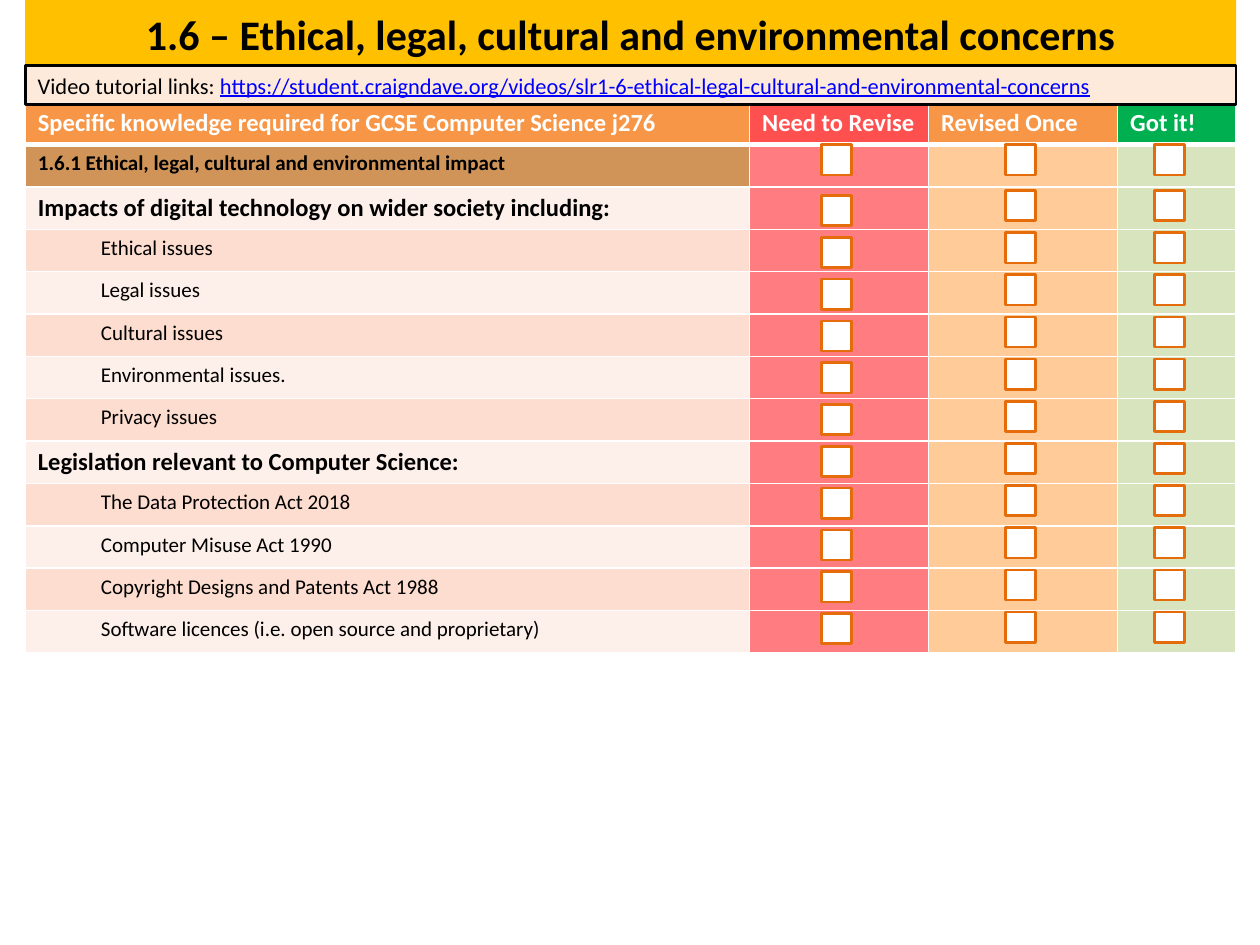
from dataclasses import dataclass

from lxml import etree
from pptx import Presentation
from pptx import util as u
from pptx.dml.color import RGBColor
from pptx.enum import shapes, text
from pptx.oxml import ns

FONT = "Calibri"
BLACK, WHITE = "000000", "FFFFFF"
LEFT, WIDTH = 0.51, 24.41
TABLE_TOP, TABLE_HEIGHT = 2.06, 11.1
BOX_SIZE, FIRST_BOX_TOP = 0.61, 2.92


@dataclass
class Wording:
    content: str
    size: float
    bold: bool = False
    colour: str = BLACK
    underline: bool = False


@dataclass
class Topic:
    wording: Wording
    fill: str
    indented: bool = False


@dataclass
class Status:
    label: str
    header_fill: str
    fill: str
    width: float
    box_left: float
    second_top: float
    last_top: float


def heading(content: str) -> Topic:
    return Topic(Wording(content, 14, True), "FDEFE9")


def issues(*names: str) -> list[Topic]:
    return [Topic(Wording(name, 12), ("FCDDCF", "FDEFE9")[i % 2], True)
            for i, name in enumerate(names)]


TOPICS = [
    Topic(Wording("1.6.1 Ethical, legal, cultural and environmental impact", 12, True), "D09458"),
    heading("Impacts of digital technology on wider society including:"),
    *issues("Ethical issues", "Legal issues", "Cultural issues",
            "Environmental issues.", "Privacy issues"),
    heading("Legislation relevant to Computer Science:"),
    *issues("The Data Protection Act 2018", "Computer Misuse Act 1990",
            "Copyright Designs and Patents Act 1988",
            "Software licences (i.e. open source and proprietary)"),
]
STATUSES = [
    Status("Need to Revise", "FF5050", "FF7C80", 3.61, 16.56, 3.94, 12.37),
    Status("Revised Once", "F79646", "FFCC99", 3.81, 20.27, 3.84, 12.34),
    Status("Got it!", "00B050", "D7E4BD", 2.39, 23.27, 3.84, 12.34),
]


def paint(target, colour: str) -> None:
    target.solid()
    target.fore_color.rgb = RGBColor.from_string(colour)


def write(paragraph, wording: Wording) -> None:
    run = paragraph.add_run()
    run.text = wording.content
    run.font.name = FONT
    run.font.size = u.Pt(wording.size)
    run.font.bold = wording.bold
    run.font.underline = wording.underline
    paint(run.font.fill, wording.colour)


def add_box(slide, left: float, top: float, width: float, height: float,
            fill: str, line: str | None = None):
    box = slide.shapes.add_shape(shapes.MSO_SHAPE.RECTANGLE,
                                 u.Cm(left), u.Cm(top), u.Cm(width), u.Cm(height))
    box.shadow.inherit = False
    paint(box.fill, fill)
    if line:
        paint(box.line.fill, line)
        box.line.width = u.Pt(1.5)
    else:
        box.line.fill.background()
    return box


def add_banner(slide, top: float, height: float, fill: str, line: str | None,
               alignment, wordings: list[Wording]) -> None:
    frame = add_box(slide, LEFT, top, WIDTH, height, fill, line).text_frame
    frame.word_wrap = True
    frame.vertical_anchor = text.MSO_ANCHOR.MIDDLE
    frame.paragraphs[0].alignment = alignment
    for wording in wordings:
        write(frame.paragraphs[0], wording)


def style_cell(cell, fill: str, bottom: float = 1, top: float = 1) -> None:
    properties = cell._tc.get_or_add_tcPr()
    for side, points in (("L", 1), ("R", 1), ("T", top), ("B", bottom)):
        border = etree.SubElement(properties, ns.qn(f"a:ln{side}"), w=str(u.Pt(points)))
        solid = etree.SubElement(border, ns.qn("a:solidFill"))
        etree.SubElement(solid, ns.qn("a:srgbClr"), val=WHITE)
    paint(cell.fill, fill)


def add_checklist(slide) -> None:
    row_count = len(TOPICS) + 1
    checklist = slide.shapes.add_table(row_count, len(STATUSES) + 1, u.Cm(LEFT), u.Cm(TABLE_TOP),
                                       u.Cm(WIDTH), u.Cm(TABLE_HEIGHT)).table
    checklist.horz_banding = False
    checklist.first_row = False
    widths = [14.6] + [status.width for status in STATUSES]
    for column, width in zip(checklist.columns, widths):
        column.width = u.Cm(width)
    for row in checklist.rows:
        row.height = u.Cm(TABLE_HEIGHT / row_count)

    headers = [("Specific knowledge required for GCSE Computer Science j276", "F79646")]
    headers += [(status.label, status.header_fill) for status in STATUSES]
    for column, (label, fill) in enumerate(headers):
        cell = checklist.cell(0, column)
        style_cell(cell, fill, bottom=3)
        write(cell.text_frame.paragraphs[0], Wording(label, 14, True, WHITE))

    for row, topic in enumerate(TOPICS, 1):
        top = 3 if row == 1 else 1
        cell = checklist.cell(row, 0)
        style_cell(cell, topic.fill, top=top)
        paragraph = cell.text_frame.paragraphs[0]
        if topic.indented:
            paragraph.level = 1
            indent = paragraph._p.get_or_add_pPr()
            indent.set("marL", str(u.Cm(1.27)))
            indent.set("indent", "0")
        write(paragraph, topic.wording)
        for column, status in enumerate(STATUSES, 1):
            cell = checklist.cell(row, column)
            style_cell(cell, status.fill, top=top)
            cell.margin_top = cell.margin_bottom = 0


def add_tick_boxes(slide) -> None:
    gaps = len(TOPICS) - 2
    for status in STATUSES:
        step = (status.last_top - status.second_top) / gaps
        tops = [FIRST_BOX_TOP] + [status.second_top + i * step for i in range(gaps + 1)]
        for top in tops:
            add_box(slide, status.box_left, top, BOX_SIZE, BOX_SIZE, WHITE, "E46C0A")


def main() -> None:
    deck = Presentation()
    deck.slide_width, deck.slide_height = u.Cm(25.4), u.Cm(19.05)
    slide = deck.slides.add_slide(deck.slide_layouts[6])
    add_banner(slide, 0, 1.37, "FFC000", None, text.PP_ALIGN.CENTER, [
        Wording("1.6 – Ethical, legal, cultural and environmental concerns", 24, True)])
    add_checklist(slide)
    add_tick_boxes(slide)
    add_banner(slide, 1.32, 0.79, "FDEADA", BLACK, text.PP_ALIGN.LEFT, [
        Wording("Video tutorial links: ", 12.8),
        Wording("https://student.craigndave.org/videos/"
                "slr1-6-ethical-legal-cultural-and-environmental-concerns",
                12.8, colour="0000FF", underline=True)])
    deck.save("out.pptx")


if __name__ == "__main__":
    main()
